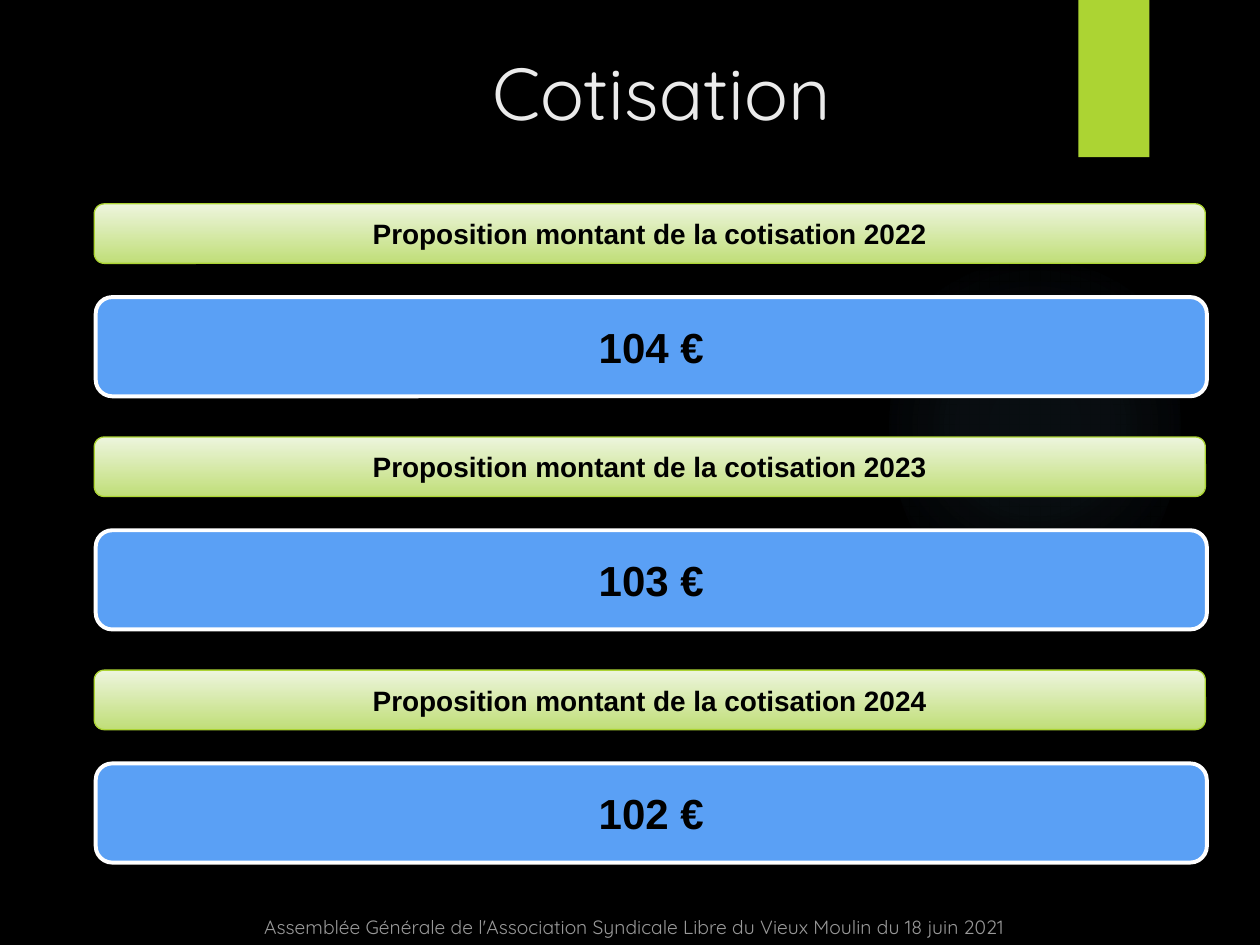
from lxml.etree import SubElement
from pptx import Presentation
from pptx.dml.color import RGBColor
from pptx.enum.shapes import MSO_SHAPE
from pptx.enum.text import MSO_ANCHOR, PP_ALIGN
from pptx.oxml import parse_xml
from pptx.oxml.ns import nsdecls, qn
from pptx.util import Cm, Pt

COLORS = {
    "background": "000000",
    "title": "EBEBEB",
    "accent": "ACD433",
    "label_top": "EDF5DD",
    "label_bottom": "C0DE78",
    "amount": "5AA0F5",
    "white": "FFFFFF",
    "black": "000000",
    "glow": "7AC4F0",
}
CONTRIBUTIONS = [(2022, 104), (2023, 103), (2024, 102)]
FIRST_TOP = 4.11
PITCH = 4.7


def rgb(name):
    return RGBColor.from_string(COLORS[name])


def set_text(sp, text, size, color, font="Arial", bold=False,
             anchor=MSO_ANCHOR.MIDDLE, alpha=None):
    tf = sp.text_frame
    tf.word_wrap = True
    tf.vertical_anchor = anchor
    p = tf.paragraphs[0]
    p.alignment = PP_ALIGN.CENTER
    r = p.add_run()
    r.text = text
    r.font.name = font
    r.font.size = Pt(size)
    r.font.bold = bold
    r.font.color.rgb = rgb(color)
    if alpha is not None:
        clr = r.font.fill._xPr.find(".//" + qn("a:srgbClr"))
        SubElement(clr, qn("a:alpha"), val=str(alpha * 1000))


def add_box(s, kind, left, top, width, height, fill=None, line=None, line_width=1):
    sp = s.shapes.add_shape(kind, Cm(left), Cm(top), Cm(width), Cm(height))
    sp.shadow.inherit = False
    if fill:
        sp.fill.solid()
        sp.fill.fore_color.rgb = rgb(fill)
    if line:
        sp.line.color.rgb = rgb(line)
        sp.line.width = Pt(line_width)
    else:
        sp.line.fill.background()
    return sp


def add_glow(s):
    sp = add_box(s, MSO_SHAPE.OVAL, 17.93, 4.65, 5.87, 7.82, "glow")
    stops = "".join(
        f'<a:gs pos="{pos * 1000}"><a:srgbClr val="{COLORS["glow"]}">'
        f'<a:alpha val="{alpha * 1000}"/></a:srgbClr></a:gs>'
        for pos, alpha in [(0, 7), (36, 6), (69, 0)]
    )
    grad = parse_xml(
        f'<a:gradFill {nsdecls("a")}><a:gsLst>{stops}</a:gsLst><a:path path="circle">'
        '<a:fillToRect l="50000" t="50000" r="50000" b="50000"/></a:path></a:gradFill>'
    )
    spPr = sp._element.spPr
    spPr.replace(spPr.find(qn("a:solidFill")), grad)


def add_title(s, text):
    sp = s.shapes.title
    sp.left, sp.top, sp.width, sp.height = Cm(2.54), Cm(0.76), Cm(21.59), Cm(2.16)
    set_text(sp, text, 42, "title", font="Quicksand")


def add_label(s, top, text):
    sp = add_box(s, MSO_SHAPE.ROUNDED_RECTANGLE, 1.9, top, 22.4, 1.2,
                 line="accent", line_width=0.75)
    sp.fill.gradient()
    sp.fill.gradient_angle = 270
    for stop, name in zip(sp.fill.gradient_stops, ("label_top", "label_bottom")):
        stop.color.rgb = rgb(name)
    set_text(sp, text, 16, "black", bold=True)


def add_amount(s, top, text):
    sp = add_box(s, MSO_SHAPE.ROUNDED_RECTANGLE, 1.93, top, 22.4, 2,
                 "amount", "white", 2.25)
    set_text(sp, text, 24, "black", bold=True)


def add_footer(s, text):
    sp = s.shapes.add_textbox(Cm(0.18), Cm(18.31), Cm(25.22), Cm(0.74))
    set_text(sp, text, 11, "white", font="Quicksand",
             anchor=MSO_ANCHOR.BOTTOM, alpha=60)


def main():
    prs = Presentation()
    prs.slide_width, prs.slide_height = Cm(25.4), Cm(19.05)
    s = prs.slides.add_slide(prs.slide_layouts[5])
    s.background.fill.solid()
    s.background.fill.fore_color.rgb = rgb("background")
    add_glow(s)
    add_box(s, MSO_SHAPE.RECTANGLE, 21.74, 0, 1.43, 3.17, "accent")
    add_title(s, "Cotisation")
    for i, (year, amount) in enumerate(CONTRIBUTIONS):
        top = FIRST_TOP + i * PITCH
        add_label(s, top, f"Proposition montant de la cotisation {year}")
        add_amount(s, top + 1.88, f"{amount} €")
    add_footer(s, "Assemblée Générale de l'Association Syndicale Libre "
                  "du Vieux Moulin du 18 juin 2021")
    prs.save("out.pptx")


if __name__ == "__main__":
    main()
